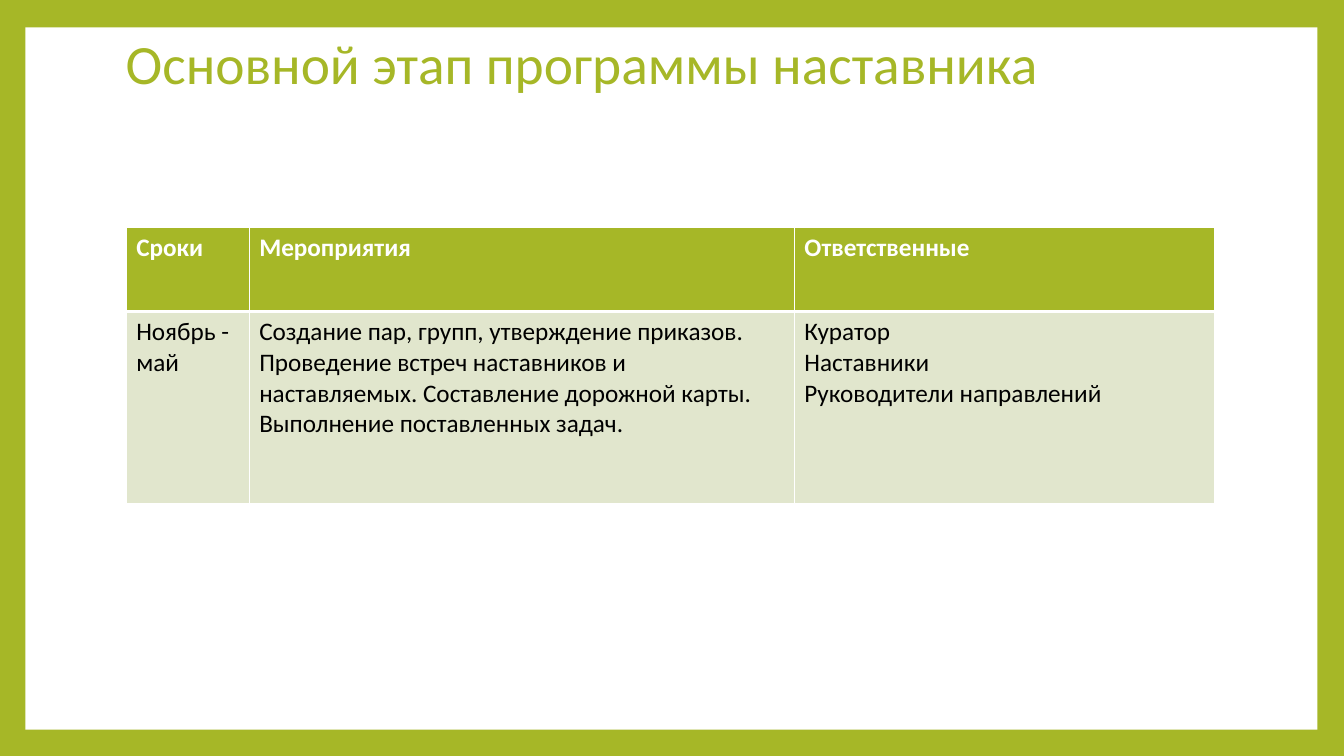
from lxml.etree import SubElement
from pptx import Presentation
from pptx.dml.color import RGBColor
from pptx.enum.shapes import MSO_SHAPE as Shape
from pptx.enum.text import MSO_ANCHOR as Anchor
from pptx.oxml.ns import qn
from pptx.util import Cm, Pt

COLORS = {"green": "A6B727", "pale": "E1E6CD", "white": "FFFFFF", "black": "000000"}

TITLE = "Основной этап программы наставника"
PLAN = [
    ["Сроки", "Мероприятия", "Ответственные"],
    [
        "Ноябрь - май",
        "Создание пар, групп, утверждение приказов.\n"
        "Проведение встреч наставников и наставляемых. Составление дорожной карты.\n"
        "Выполнение поставленных задач.",
        "Куратор\nНаставники\nРуководители направлений",
    ],
]
COLUMN_WIDTHS = [3.1, 13.74, 10.59]
ROW_HEIGHTS = [2.13, 4.83]


class SlideBuilder:
    """Draws elements on one slide; lengths are in centimetres."""

    font = "Calibri"

    def __init__(self, slide):
        self.slide = slide

    def color(self, name):
        return RGBColor.from_string(COLORS[name])

    def paint(self, fill, color):
        fill.solid()
        fill.fore_color.rgb = self.color(color)

    def background(self, color):
        self.paint(self.slide.background.fill, color)

    def panel(self, left, top, width, height, color):
        panel = self.slide.shapes.add_shape(
            Shape.RECTANGLE, Cm(left), Cm(top), Cm(width), Cm(height))
        panel.shadow.inherit = False
        panel.line.fill.background()
        self.paint(panel.fill, color)

    def format_text(self, frame, size, color, bold=False):
        for paragraph in frame.paragraphs:
            for run in paragraph.runs:
                run.font.name = self.font
                run.font.size = Pt(size)
                run.font.bold = bold
                run.font.color.rgb = self.color(color)

    def title(self, text, left, top, width, height):
        frame = self.slide.shapes.add_textbox(
            Cm(left), Cm(top), Cm(width), Cm(height)).text_frame
        frame.word_wrap = True
        frame.vertical_anchor = Anchor.MIDDLE
        frame.text = text
        frame.paragraphs[0].line_spacing = 0.9
        self.format_text(frame, 39.6, "green")

    def border(self, cell, side, width):
        line = SubElement(cell._tc.get_or_add_tcPr(), qn(f"a:ln{side}"), w=str(Pt(width)))
        fill = SubElement(line, qn("a:solidFill"))
        SubElement(fill, qn("a:srgbClr"), val=COLORS["white"])

    def cell(self, cell, text, header):
        cell.text_frame.text = text
        self.format_text(cell.text_frame, 18, "white" if header else "black", header)
        for side in "LRTB":
            thick = side == ("B" if header else "T")
            self.border(cell, side, 3 if thick else 1)
        self.paint(cell.fill, "green" if header else "pale")

    def table(self, rows, left, top, widths, heights):
        table = self.slide.shapes.add_table(
            len(rows), len(widths), Cm(left), Cm(top),
            Cm(sum(widths)), Cm(sum(heights))).table
        for column, width in zip(table.columns, widths):
            column.width = Cm(width)
        for row, height in zip(table.rows, heights):
            row.height = Cm(height)
        for r, texts in enumerate(rows):
            for c, text in enumerate(texts):
                self.cell(table.cell(r, c), text, header=r == 0)


def main():
    deck = Presentation()
    deck.slide_width, deck.slide_height = Cm(33.87), Cm(19.05)
    builder = SlideBuilder(deck.slides.add_slide(deck.slide_layouts[6]))
    builder.background("green")
    builder.panel(0.64, 0.69, 32.56, 17.7, "white")
    builder.title(TITLE, 2.92, 0.94, 27.43, 1.45)
    builder.table(PLAN, 3.18, 5.72, COLUMN_WIDTHS, ROW_HEIGHTS)
    deck.save("out.pptx")


if __name__ == "__main__":
    main()
